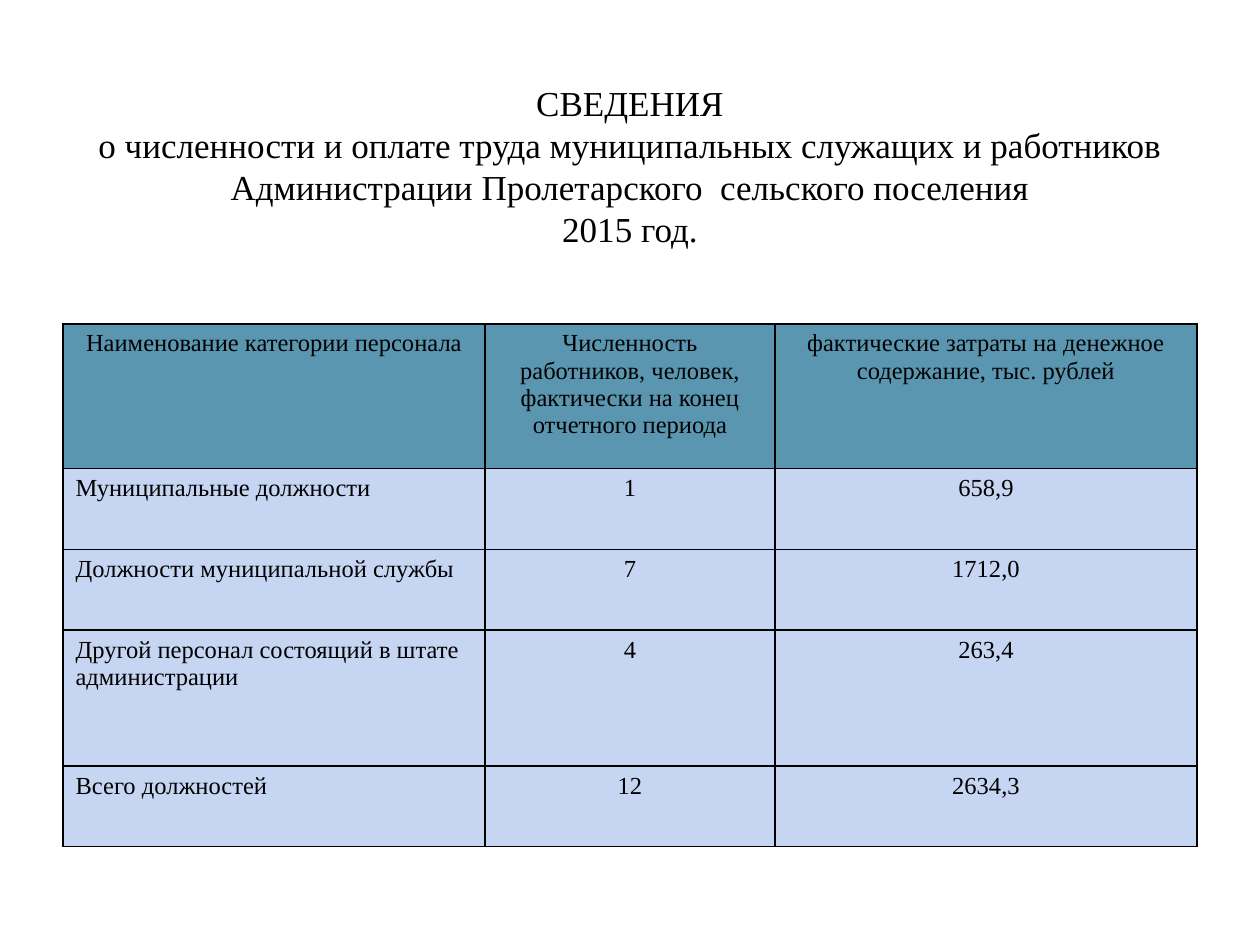
"""Build a slide with a table of municipal staff numbers and pay."""
import dataclasses
import typing

import lxml.etree
import pptx
import pptx.dml.color
import pptx.enum.text
import pptx.oxml.ns
import pptx.util

Inches = pptx.util.Inches
Align = pptx.enum.text.PP_ALIGN
RGB = pptx.dml.color.RGBColor.from_string


@dataclasses.dataclass(frozen=True)
class Theme:
    font: str = "Times New Roman"
    ink: str = "000000"
    header_fill: str = "5B96B1"
    body_fill: str = "C6D5F2"
    title_size: int = 20
    table_size: int = 14
    border_pt: float = 1


class StaffRow(typing.NamedTuple):
    height: float
    category: str
    headcount: str
    cost: str


THEME = Theme()
TITLE = (
    "СВЕДЕНИЯ\n"
    "о численности и оплате труда муниципальных служащих и работников "
    "Администрации Пролетарского  сельского поселения\n"
    "2015 год."
)
COLUMN_WIDTHS = (3.35, 2.3, 3.35)
ROWS = (
    StaffRow(1.15, "Наименование категории персонала",
             "Численность работников, человек,\nфактически на конец отчетного периода",
             "фактические затраты на денежное содержание, тыс. рублей"),
    StaffRow(0.64, "Муниципальные должности", "1", "658,9"),
    StaffRow(0.64, "Должности муниципальной службы", "7", "1712,0"),
    StaffRow(1.08, "Другой персонал состоящий в штате администрации", "4", "263,4"),
    StaffRow(0.64, "Всего должностей", "12", "2634,3"),
)


def format_text(tf, size: int, align) -> None:
    """Apply the theme font and an alignment to all paragraphs."""
    for p in tf.paragraphs:
        p.alignment = align
        for r in p.runs:
            for name, value in {"name": THEME.font, "size": pptx.util.Pt(size)}.items():
                setattr(r.font, name, value)
            r.font.color.rgb = RGB(THEME.ink)


def add_title(slide) -> None:
    """Add the centred heading."""
    sp = slide.shapes.add_textbox(Inches(0.5), Inches(0.3), Inches(9), Inches(2.03))
    tf = sp.text_frame
    frame = {"word_wrap": True, "vertical_anchor": pptx.enum.text.MSO_ANCHOR.MIDDLE}
    for name, value in frame.items():
        setattr(tf, name, value)
    tf.paragraphs[0].text = TITLE
    format_text(tf, THEME.title_size, Align.CENTER)


def add_borders(cell) -> None:
    """Draw a solid line on each side of a cell."""
    qn = pptx.oxml.ns.qn
    tc_pr = cell._tc.get_or_add_tcPr()
    width = str(int(pptx.util.Pt(THEME.border_pt)))
    for side in ("a:lnL", "a:lnR", "a:lnT", "a:lnB"):
        line = lxml.etree.SubElement(tc_pr, qn(side), w=width)
        fill = lxml.etree.SubElement(line, qn("a:solidFill"))
        lxml.etree.SubElement(fill, qn("a:srgbClr"), val=THEME.ink)


def fill_cell(cell, text: str, fill: str, align) -> None:
    """Write and style one table cell."""
    cell.text = text
    format_text(cell.text_frame, THEME.table_size, align)
    add_borders(cell)
    cell.fill.solid()
    cell.fill.fore_color.rgb = RGB(fill)


def add_staff_table(slide) -> None:
    """Add the staff table, with a header and a total row."""
    height = sum(row.height for row in ROWS)
    table = slide.shapes.add_table(
        len(ROWS), len(COLUMN_WIDTHS), Inches(0.5), Inches(2.57),
        Inches(sum(COLUMN_WIDTHS)), Inches(height)).table
    for column, width in zip(table.columns, COLUMN_WIDTHS):
        column.width = Inches(width)
    for i, row in enumerate(ROWS):
        table.rows[i].height = Inches(row.height)
        fill = THEME.body_fill if i else THEME.header_fill
        for j, text in enumerate(row[1:]):
            align = Align.LEFT if i and not j else Align.CENTER
            fill_cell(table.cell(i, j), text, fill, align)


def main() -> None:
    """Create and save the presentation."""
    prs = pptx.Presentation()
    prs.slide_width, prs.slide_height = Inches(10), Inches(7.5)
    s = prs.slides.add_slide(prs.slide_layouts[6])
    add_title(s)
    add_staff_table(s)
    prs.save("out.pptx")


if __name__ == "__main__":
    main()
